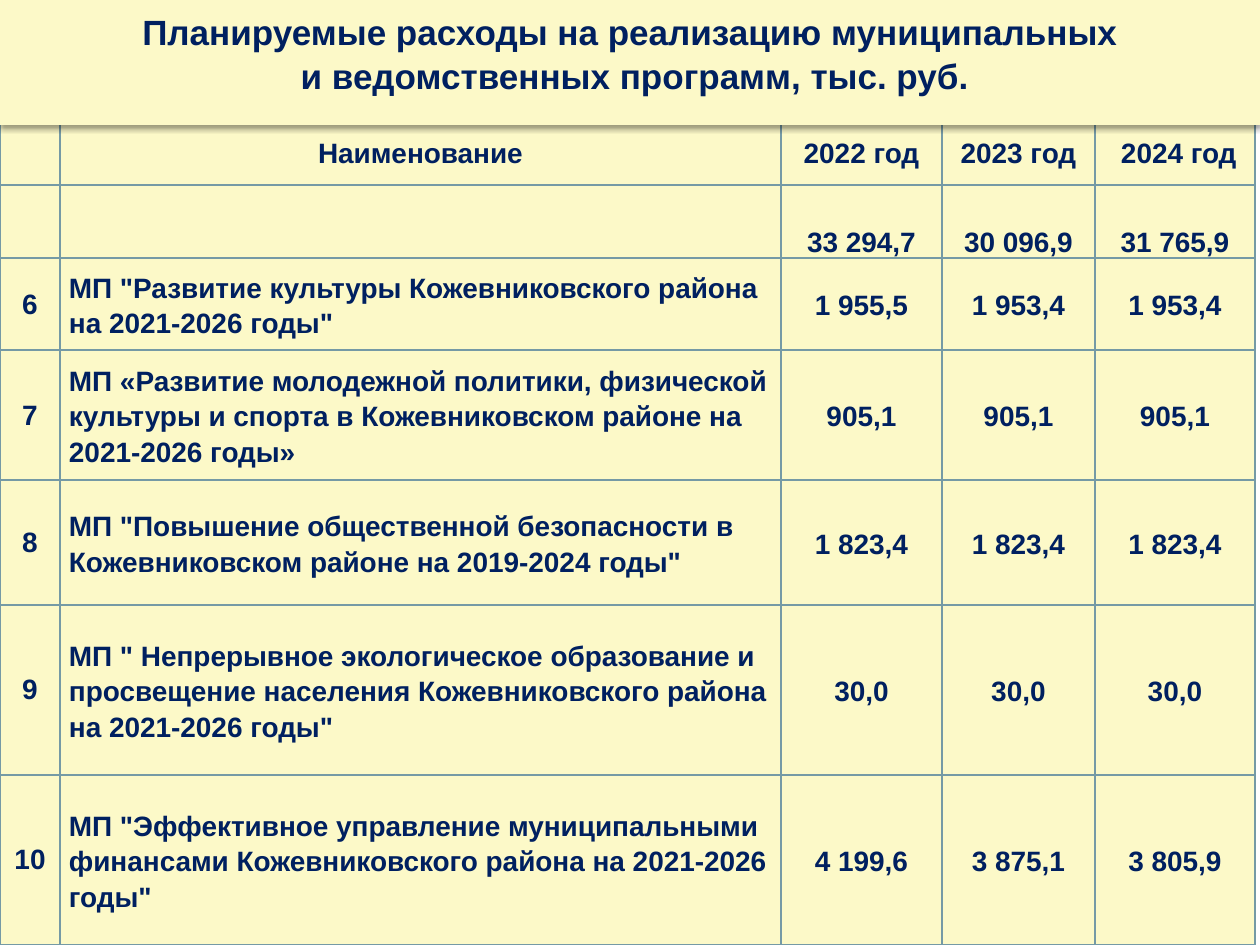
from lxml import etree
from pptx import Presentation
from pptx.dml.color import RGBColor
from pptx.enum.text import MSO_ANCHOR, MSO_AUTO_SIZE, PP_ALIGN
from pptx.oxml import parse_xml
from pptx.oxml.ns import qn
from pptx.util import Pt

TOP, MIDDLE, BOTTOM = MSO_ANCHOR.TOP, MSO_ANCHOR.MIDDLE, MSO_ANCHOR.BOTTOM
LEFT, CENTER = PP_ALIGN.LEFT, PP_ALIGN.CENTER
NO_AUTOFIT = MSO_AUTO_SIZE.NONE
PX = 914400 / 126
COLORS = {"paper": "FCF9C8", "ink": "002060", "grid": "759AA5", "shadow": "000000"}
DRAWING_NS = "http://schemas.openxmlformats.org/drawingml/2006/main"

HEADING = ("Планируемые расходы на реализацию муниципальных\n"
           " и ведомственных программ, тыс. руб.")
COLUMN_WIDTHS = [60, 721, 161, 153, 160]
ROW_HEIGHTS = [63, 73, 92, 130, 125, 170, 170]
BUDGET = [
    ["", "Наименование", "2022 год", "2023 год", " 2024 год"],
    ["", "", "33 294,7", "30 096,9", "31 765,9"],
    ["6", 'МП "Развитие культуры Кожевниковского района на 2021-2026 годы"',
     "1 955,5", "1 953,4", "1 953,4"],
    ["7", "МП «Развитие молодежной политики, физической культуры и спорта "
          "в Кожевниковском районе на 2021-2026 годы»",
     "905,1", "905,1", "905,1"],
    ["8", 'МП "Повышение общественной безопасности в Кожевниковском районе '
          'на 2019-2024 годы"',
     "1 823,4", "1 823,4", "1 823,4"],
    ["9", 'МП " Непрерывное экологическое образование и просвещение населения '
          'Кожевниковского района на 2021-2026 годы"',
     "30,0", "30,0", "30,0"],
    ["10", 'МП "Эффективное управление муниципальными финансами '
           'Кожевниковского района на 2021-2026 годы"',
     "4 199,6", "3 875,1", "3 805,9"],
]


def px(length):
    return round(length * PX)


def format_text(frame, size, align, line_spacing):
    for paragraph in frame.paragraphs:
        paragraph.alignment = align
        paragraph.line_spacing = line_spacing
        font_format = {"name": "Arial", "size": Pt(size), "bold": True}
        for run in paragraph.runs:
            for attribute, value in font_format.items():
                setattr(run.font, attribute, value)
            run.font.color.rgb = RGBColor.from_string(COLORS["ink"])


prs = Presentation()
prs.slide_width, prs.slide_height = px(1260), px(945)
slide = prs.slides.add_slide(prs.slide_layouts[5])

# Budget table
budget_frame = slide.shapes.add_table(
    len(ROW_HEIGHTS), len(COLUMN_WIDTHS),
    0, px(122), px(sum(COLUMN_WIDTHS)), px(sum(ROW_HEIGHTS)))
budget_table = budget_frame.table
budget_table.first_row = False
budget_table.horz_banding = False
for column, width in zip(budget_table.columns, COLUMN_WIDTHS):
    column.width = px(width)
for row, height in zip(budget_table.rows, ROW_HEIGHTS):
    row.height = px(height)

for row_index, entries in enumerate(BUDGET):
    for column_index, entry in enumerate(entries):
        cell = budget_table.cell(row_index, column_index)
        cell.text = entry
        is_program = row_index > 1 and column_index > 0
        side, top = (9, 0) if is_program else (1, 1)
        cell_format = {
            "margin_left": px(side), "margin_right": px(side),
            "margin_top": px(top), "margin_bottom": 0,
            "vertical_anchor": BOTTOM if row_index == 1 else MIDDLE,
        }
        for attribute, value in cell_format.items():
            setattr(cell, attribute, value)
        format_text(cell.text_frame, 16,
                    LEFT if is_program and column_index == 1 else CENTER,
                    1.15 if is_program else 1.0)

        cell_properties = cell._tc.get_or_add_tcPr()
        for edge in ("a:lnL", "a:lnR", "a:lnT", "a:lnB"):
            border = etree.SubElement(cell_properties, qn(edge), w=str(Pt(1)))
            border_fill = etree.SubElement(border, qn("a:solidFill"))
            etree.SubElement(border_fill, qn("a:srgbClr"), val=COLORS["grid"])
        cell.fill.solid()
        cell.fill.fore_color.rgb = RGBColor.from_string(COLORS["paper"])

# Heading band, in front of the table so that its shadow falls on it
heading = slide.shapes.title
slide.shapes.element.append(heading.element)
heading_place = {"left": 0, "top": 0, "width": px(1260), "height": px(125)}
for attribute, value in heading_place.items():
    setattr(heading, attribute, value)
heading.fill.solid()
heading.fill.fore_color.rgb = RGBColor.from_string(COLORS["paper"])
heading.line.fill.background()
heading.element.spPr.append(parse_xml(
    f'<a:effectLst xmlns:a="{DRAWING_NS}">'
    f'<a:outerShdw blurRad="{Pt(3.1)}" dist="{Pt(2)}" dir="5400000" rotWithShape="0">'
    f'<a:srgbClr val="{COLORS["shadow"]}"><a:alpha val="38000"/></a:srgbClr>'
    '</a:outerShdw></a:effectLst>'))
heading_text = heading.text_frame
heading_text.text = HEADING
text_format = {"auto_size": NO_AUTOFIT, "word_wrap": True,
               "vertical_anchor": TOP, "margin_top": px(8)}
for attribute, value in text_format.items():
    setattr(heading_text, attribute, value)
format_text(heading_text, 20, CENTER, 1.05)

prs.save("out.pptx")
